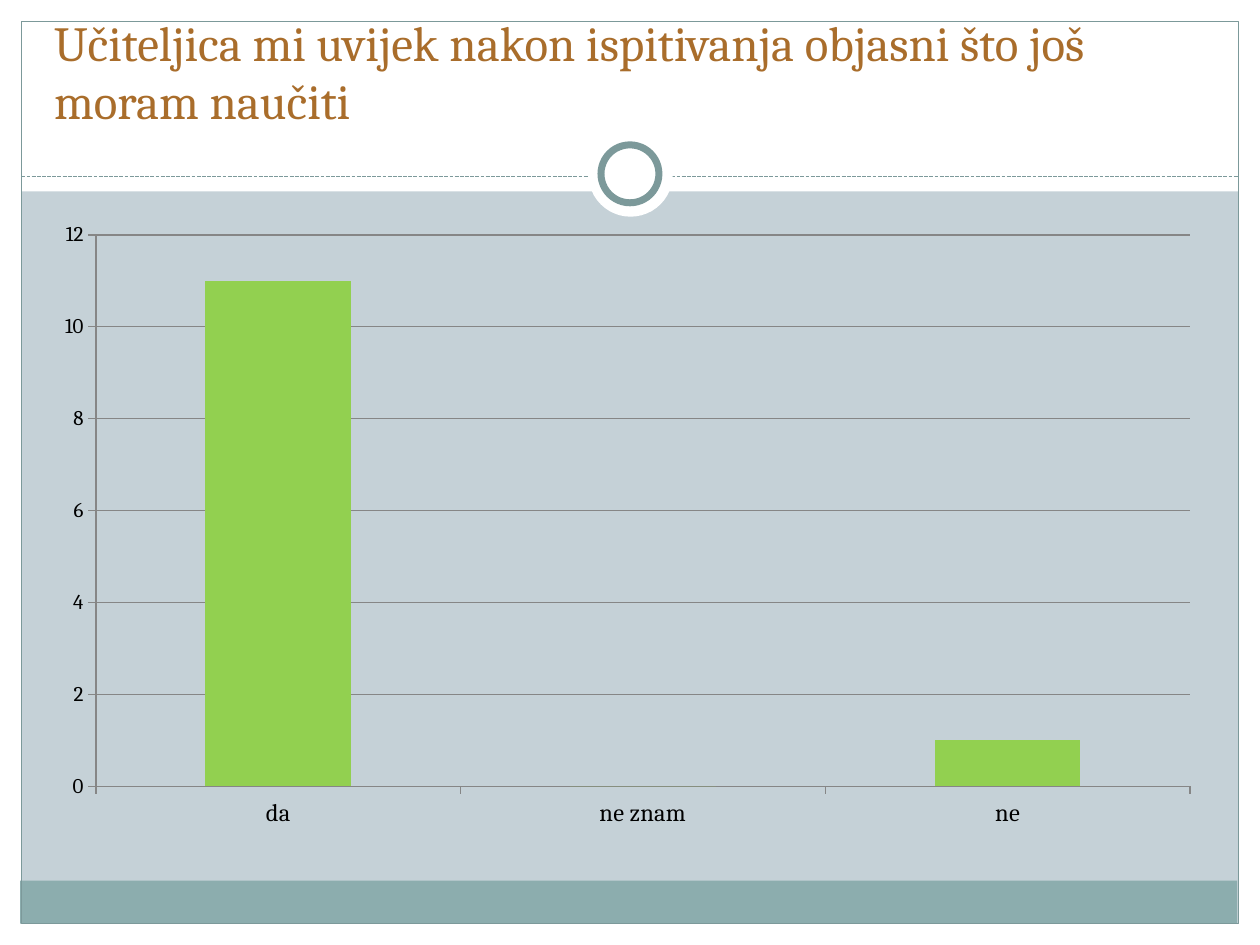
"""Build a survey slide with a framed background, a title and a column chart."""
from dataclasses import dataclass
from typing import Optional

from pptx import Presentation
from pptx.chart.data import CategoryChartData
from pptx.dml.color import RGBColor
from pptx.enum.chart import XL_CHART_TYPE as ChartType, XL_TICK_MARK as TickMark
from pptx.enum.dml import MSO_LINE_DASH_STYLE as DashStyle
from pptx.enum.shapes import MSO_CONNECTOR as Connector, MSO_SHAPE as ShapeType
from pptx.enum.text import MSO_ANCHOR as Anchor, MSO_AUTO_SIZE as AutoSize, PP_ALIGN as Align
from pptx.oxml.xmlchemy import OxmlElement
from pptx.util import Inches, Pt

WHITE = RGBColor(0xFF, 0xFF, 0xFF)
BLACK = RGBColor(0x00, 0x00, 0x00)
BACKGROUND = RGBColor(0xC5, 0xD1, 0xD7)
TEAL = RGBColor(0x8C, 0xAD, 0xAE)
FRAME = RGBColor(0x7C, 0x99, 0x9A)
BROWN = RGBColor(0xA9, 0x6D, 0x2B)
GREEN = RGBColor(0x92, 0xD0, 0x50)
GRAY = RGBColor(0x86, 0x86, 0x86)
FONT = "Cambria"


@dataclass
class Panel:
    left: float
    top: float
    width: float
    height: float
    fill: Optional[RGBColor] = WHITE
    line_width: float = 0
    kind: ShapeType = ShapeType.RECTANGLE


PANELS = [
    Panel(0, 7.33, 10, 0.17),
    Panel(0, 0, 10, 1.52),
    Panel(0, 0, 0.17, 7.5),
    Panel(9.83, 0, 0.17, 7.5),
    Panel(0.16, 6.99, 9.66, 0.34, TEAL),
    Panel(0.17, 0.17, 9.66, 7.16, None, 0.75),
]
RINGS = [
    Panel(4.67, 1.05, 0.67, 0.67, kind=ShapeType.OVAL),
    Panel(4.77, 1.15, 0.46, 0.46, line_width=4, kind=ShapeType.OVAL),
]


def set_format(target, values: dict) -> None:
    for name, value in values.items():
        setattr(target, name, value)


def draw_panel(slide, panel: Panel) -> None:
    shape = slide.shapes.add_shape(
        panel.kind, *map(Inches, (panel.left, panel.top, panel.width, panel.height)))
    shape.shadow.inherit = False
    if panel.fill is None:
        shape.fill.background()
    else:
        shape.fill.solid()
        shape.fill.fore_color.rgb = panel.fill
    if panel.line_width:
        shape.line.color.rgb = FRAME
        shape.line.width = Pt(panel.line_width)
    else:
        shape.line.fill.background()


def draw_divider(slide) -> None:
    divider = slide.shapes.add_connector(
        Connector.STRAIGHT, Inches(0.17), Inches(1.4), Inches(9.83), Inches(1.4))
    divider.line.color.rgb = FRAME
    set_format(divider.line, {"width": Pt(0.75), "dash_style": DashStyle.SQUARE_DOT})
    divider._element.spPr.append(OxmlElement("a:effectLst"))


def write_title(slide, text: str) -> None:
    title = slide.shapes.title
    slide.shapes._spTree.append(title._element)
    set_format(title, {"left": Inches(0.33), "top": Inches(0.25),
                       "width": Inches(9.33), "height": Inches(0.83)})
    frame = title.text_frame
    frame.text = text
    set_format(frame, {"word_wrap": True, "auto_size": AutoSize.NONE,
                       "vertical_anchor": Anchor.BOTTOM})
    paragraph = frame.paragraphs[0]
    paragraph.alignment = Align.LEFT
    font = paragraph.runs[0].font
    set_format(font, {"name": FONT, "size": Pt(28)})
    font.color.rgb = BROWN


def format_axis(axis, size: float) -> None:
    set_format(axis, {"major_tick_mark": TickMark.OUTSIDE, "minor_tick_mark": TickMark.NONE})
    axis.tick_labels.font.size = Pt(size)
    axis.format.line.color.rgb = GRAY


def draw_chart(slide) -> None:
    data = CategoryChartData()
    data.categories = ["da", "ne znam", "ne"]
    data.add_series("Series 1", (11, 0, 1))
    chart = slide.shapes.add_chart(
        ChartType.COLUMN_CLUSTERED, Inches(0.33), Inches(1.67), Inches(9.3), Inches(5), data).chart
    set_format(chart, {"has_legend": False, "has_title": False})
    set_format(chart.font, {"name": FONT, "size": Pt(10)})
    chart.font.color.rgb = BLACK
    format_axis(chart.category_axis, 14)
    format_axis(chart.value_axis, 12)
    set_format(chart.value_axis, {"minimum_scale": 0, "maximum_scale": 12, "major_unit": 2,
                                  "has_major_gridlines": True})
    chart.value_axis.major_gridlines.format.line.color.rgb = GRAY
    plot = chart.plots[0]
    set_format(plot, {"gap_width": 150, "vary_by_categories": False})
    bar_fill = plot.series[0].format.fill
    bar_fill.solid()
    bar_fill.fore_color.rgb = GREEN


def main() -> None:
    presentation = Presentation()
    set_format(presentation, {"slide_width": Inches(10), "slide_height": Inches(7.5)})
    slide = presentation.slides.add_slide(presentation.slide_layouts[5])
    slide.background.fill.solid()
    slide.background.fill.fore_color.rgb = BACKGROUND
    for panel in PANELS:
        draw_panel(slide, panel)
    draw_divider(slide)
    for ring in RINGS:
        draw_panel(slide, ring)
    write_title(slide, "Učiteljica mi uvijek nakon ispitivanja objasni što još moram naučiti")
    draw_chart(slide)
    presentation.save("out.pptx")


if __name__ == "__main__":
    main()
